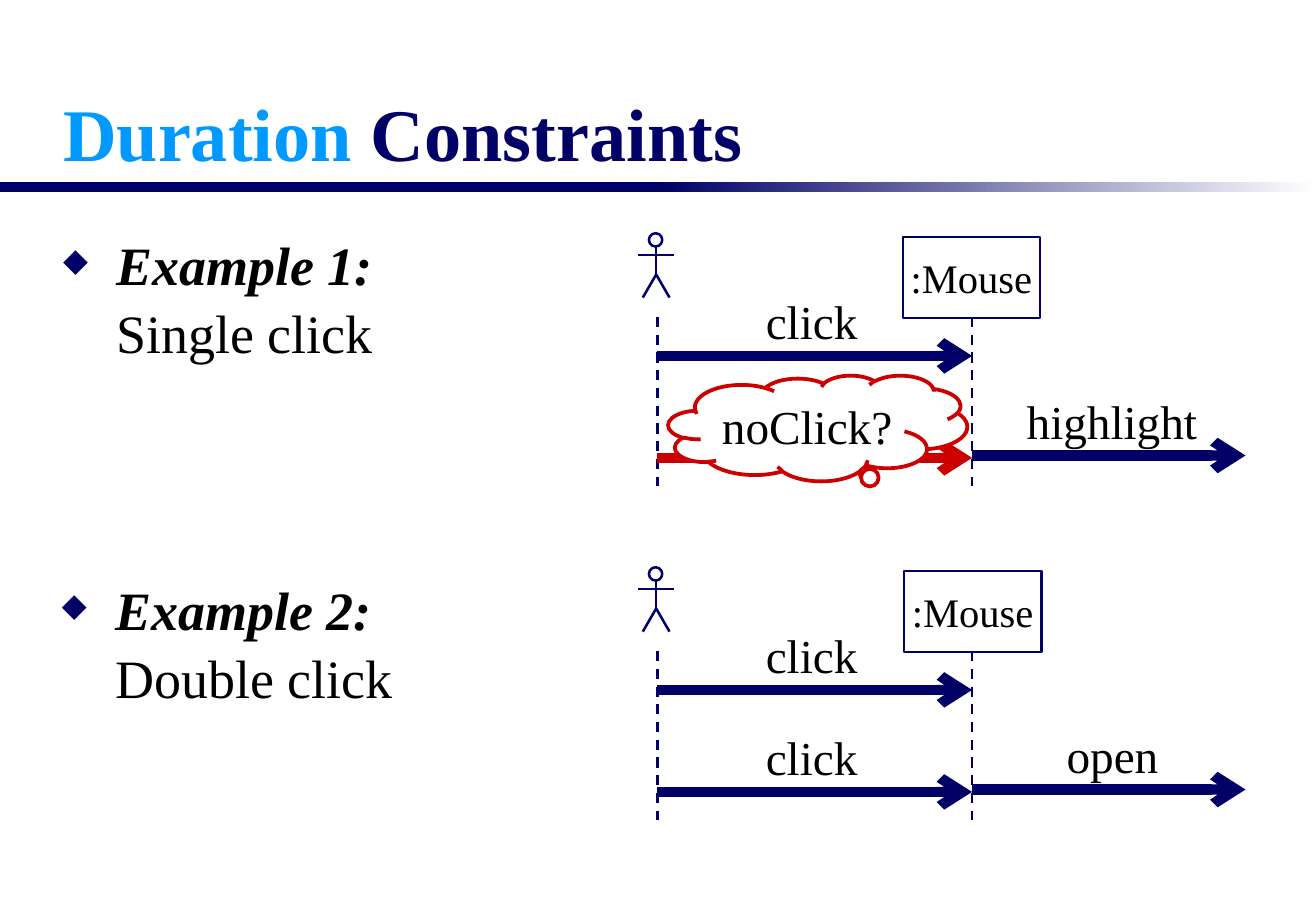
from lxml import etree
from pptx import Presentation
from pptx.dml.color import RGBColor
from pptx.enum.dml import MSO_LINE
from pptx.enum.shapes import MSO_CONNECTOR, MSO_SHAPE
from pptx.enum.text import MSO_ANCHOR, MSO_AUTO_SIZE, PP_ALIGN
from pptx.oxml.ns import qn
from pptx.util import Pt

EMU_PER_PX = 9144
NAVY, SKY, RED, BLACK, WHITE = "000066", "0099FF", "CC0000", "000000", "FFFFFF"
RECTANGLE, OVAL, CLOUD = MSO_SHAPE.RECTANGLE, MSO_SHAPE.OVAL, MSO_SHAPE.CLOUD_CALLOUT
STRAIGHT, DASH = MSO_CONNECTOR.STRAIGHT, MSO_LINE.DASH
TOP, MIDDLE, BOTTOM = MSO_ANCHOR.TOP, MSO_ANCHOR.MIDDLE, MSO_ANCHOR.BOTTOM
LEFT, CENTER, NO_FIT = PP_ALIGN.LEFT, PP_ALIGN.CENTER, MSO_AUTO_SIZE.NONE
ACTOR_X, MOUSE_X, END_X = 541, 800, 1025
EXAMPLE_STEP = 275


def px(*lengths):
    return [length * EMU_PER_PX for length in lengths]


def color(text):
    return RGBColor.from_string(text)


def assign(target, values):
    for name, value in values.items():
        setattr(target, name, value)


class SequenceSlide:
    """Holds the style and the current slide, and draws its elements."""

    font = "Times New Roman"

    def __init__(self, deck):
        self.page = deck.slides.add_slide(deck.slide_layouts[5])
        self.shapes = self.page.shapes

    def fill_text(self, box, spans, size, align=CENTER, anchor=MIDDLE, wrap=False):
        assign(box.text_frame, {"auto_size": NO_FIT, "word_wrap": wrap,
                                "vertical_anchor": anchor})
        para = box.text_frame.paragraphs[0]
        para.alignment = align
        for text, shade, look in spans:
            if look.get("new_line"):
                para.add_line_break()
            span = para.add_run()
            span.text = text
            assign(span.font, {"name": self.font, "size": Pt(size),
                               "bold": look.get("bold", False),
                               "italic": look.get("italic", False)})
            span.font.color.rgb = color(shade)
        return para

    def title(self, *spans):
        box = self.shapes.title
        assign(box, dict(zip(("left", "top", "width", "height"), px(42, 29, 1000, 121))))
        self.fill_text(box, [(text, shade, {"bold": True}) for text, shade in spans],
                       44, LEFT, BOTTOM, True)

    def shape(self, kind, place, fill=None, line=None, width=1.5):
        box = self.shapes.add_shape(kind, *px(*place))
        box.shadow.inherit = False
        if fill:
            box.fill.solid()
            box.fill.fore_color.rgb = color(fill)
        else:
            box.fill.background()
        if line:
            box.line.color.rgb = color(line)
            box.line.width = Pt(width)
        else:
            box.line.fill.background()
        return box

    def title_rule(self):
        self.shape(RECTANGLE, (0, 150, 542, 8), NAVY)
        fade = self.shape(RECTANGLE, (541, 150, 542, 8)).fill
        fade.gradient()
        fade.gradient_angle = 0
        for stop, shade in zip(fade.gradient_stops, (NAVY, WHITE)):
            stop.color.rgb = color(shade)

    def line(self, start, end, shade=NAVY, width=1.5, dash=None, arrow=False):
        connector = self.shapes.add_connector(STRAIGHT, *px(*start, *end))
        assign(connector.line, {"width": Pt(width), "dash_style": dash})
        connector.line.color.rgb = color(shade)
        properties = connector._element.spPr
        if arrow:
            etree.SubElement(properties.find(qn("a:ln")), qn("a:tailEnd"), type="arrow")
        etree.SubElement(properties, qn("a:effectLst"))

    def message(self, start, end, y, shade=NAVY):
        self.line((start, y), (end, y), shade, 6, arrow=True)

    def label(self, text, left, y, width):
        box = self.shapes.add_textbox(*px(left, y - 57, width, 57))
        self.fill_text(box, [(text, BLACK, {})], 28, anchor=TOP)

    def bullet(self, heading, text, left, top):
        box = self.shapes.add_textbox(*px(left, top, 358, 125))
        spans = [(heading, BLACK, {"bold": True, "italic": True}),
                 (text, BLACK, {"new_line": True})]
        para = self.fill_text(box, spans, 32, LEFT, TOP, True)
        assign(para, {"space_before": Pt(3.6), "line_spacing": 1.05})
        properties = para._p.get_or_add_pPr()
        indent, = px(44)
        properties.set("marL", str(indent))
        properties.set("indent", str(-indent))
        shade = etree.SubElement(properties, qn("a:buClr"))
        etree.SubElement(shade, qn("a:srgbClr"), val=NAVY)
        etree.SubElement(properties, qn("a:buSzPct"), val="60000")
        etree.SubElement(properties, qn("a:buChar"), char="◆")

    def actor(self, top):
        hip = (540, top + 34)
        for start, end in ((hip, (540, top + 3)), ((529, top + 53), hip),
                           ((551, top + 53), hip), ((525, top + 18), (555, top + 18))):
            self.line(start, end)
        self.shape(OVAL, (534, top, 11, 11), WHITE, NAVY)

    def lifelines(self, top, mouse_left):
        mouse = self.shape(RECTANGLE, (mouse_left, top + 3, 113, 67), line=NAVY)
        self.fill_text(mouse, [(":Mouse", BLACK, {})], 24)
        for x in (ACTOR_X, MOUSE_X):
            self.line((x, top + 69), (x, top + 208), dash=DASH)
        self.actor(top)

    def click(self, y):
        self.message(ACTOR_X, MOUSE_X, y)
        self.label("click", 620, y, 96)

    def no_click(self, y):
        self.message(ACTOR_X, MOUSE_X, y, RED)
        cloud = self.shape(CLOUD, (550, y - 68, 246, 87), WHITE, RED, 2.25)
        cloud.adjustments[0], cloud.adjustments[1] = 0.16, 0.43
        self.fill_text(cloud, [("noClick?", BLACK, {})], 28)

    def result(self, text, y, left, width):
        self.message(MOUSE_X, END_X, y)
        self.label(text, left, y, width)


def main():
    deck = Presentation()
    deck.slide_width, deck.slide_height = px(1083, 750)
    page = SequenceSlide(deck)
    page.title_rule()
    page.title(("Duration", SKY), (" Constraints", NAVY))
    page.bullet("Example 1:", "Single click", 42, 183)
    page.bullet("Example 2:", "Double click", 41, 467)
    examples = ((743, page.no_click, ("highlight", 834, 162)),
                (744, page.click, ("open", 867, 97)))
    for number, (mouse_left, second, (text, left, width)) in enumerate(examples):
        top = 192 + number * EXAMPLE_STEP
        page.lifelines(top, mouse_left)
        page.click(top + 101)
        second(top + 185)
        page.result(text, top + 183, left, width)
    deck.save("out.pptx")


if __name__ == "__main__":
    main()
